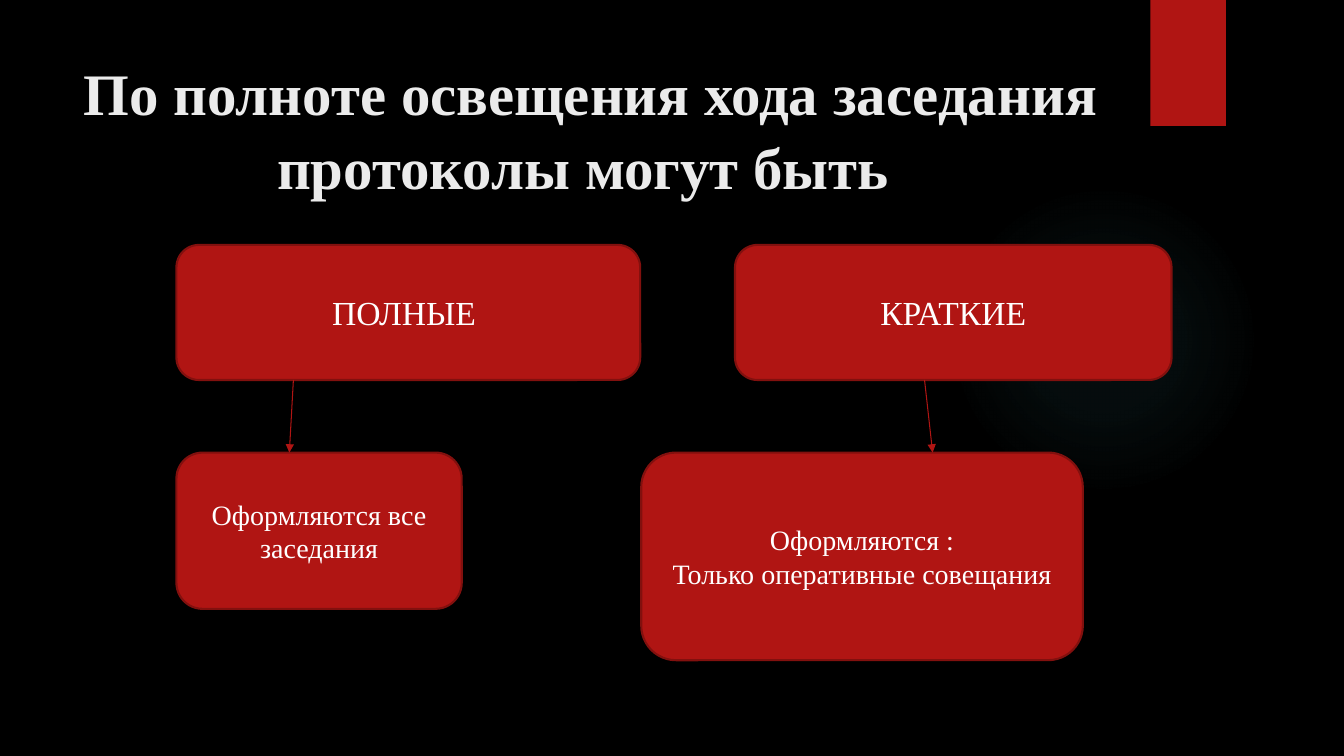
"""Build a slide on full and short meeting minutes."""
import pptx
import pptx.util
import pptx.dml.color
import pptx.enum.shapes
import pptx.enum.text
import pptx.oxml
import pptx.oxml.ns

Inches, Pt = pptx.util.Inches, pptx.util.Pt
SHAPE = pptx.enum.shapes.MSO_SHAPE
ALIGN = pptx.enum.text.PP_ALIGN
ANCHOR = pptx.enum.text.MSO_ANCHOR
NS = pptx.oxml.ns.nsdecls("a")
FONT = "Times New Roman"
RED = "B01513"


def color(text):
    return pptx.dml.color.RGBColor.from_string(text)


def block(kind, box, fill, edge=None):
    shape = slide.shapes.add_shape(kind, *map(Inches, box))
    shape.shadow.inherit = False
    shape.fill.solid()
    shape.fill.fore_color.rgb = color(fill)
    if edge:
        shape.line.color.rgb = color(edge)
        shape.line.width = Pt(1.5)
    else:
        shape.line.fill.background()
    return shape


deck = pptx.Presentation()
deck.slide_width, deck.slide_height = Inches(13.33), Inches(7.5)
slide = deck.slides.add_slide(deck.slide_layouts[5])
slide.background.fill.solid()
slide.background.fill.fore_color.rgb = color("000000")

glow = block(SHAPE.OVAL, (9.41, 1.83, 3.08, 3.08), "50B9C1")
stops = "".join(
    f'<a:gs pos="{pos * 1000}"><a:srgbClr val="50B9C1">'
    f'<a:alpha val="{alpha * 1000}"/></a:srgbClr></a:gs>'
    for pos, alpha in ((0, 7), (36, 6), (69, 0), (100, 0))
)
grad = pptx.oxml.parse_xml(
    f'<a:gradFill {NS} rotWithShape="1"><a:gsLst>{stops}</a:gsLst>'
    '<a:path path="circle"><a:fillToRect l="50000" t="50000" r="50000" b="50000"/>'
    '</a:path></a:gradFill>'
)
props = glow._element.spPr
props.replace(props.find(pptx.oxml.ns.qn("a:solidFill")), grad)

block(SHAPE.RECTANGLE, (11.41, 0, 0.75, 1.25), RED)

title = slide.shapes.title
title.left, title.top = Inches(0.71), Inches(0.5)
title.width, title.height = Inches(10.29), Inches(1.53)
frame = title.text_frame
frame.text = "По полноте освещения хода заседания протоколы могут быть "
frame.word_wrap = True
frame.auto_size = pptx.enum.text.MSO_AUTO_SIZE.NONE
frame.vertical_anchor = ANCHOR.MIDDLE
head = frame.paragraphs[0]
head.alignment = ALIGN.CENTER
head.line_spacing = 1.05
head.font.name, head.font.size, head.font.bold = FONT, Pt(42), True
head.font.color.rgb = color("EBEBEB")
slide.shapes._spTree.append(title._element)

cards = (
    ((1.75, 2.43, 4.6, 1.34), 24, "ПОЛНЫЕ "),
    ((7.29, 2.43, 4.33, 1.34), 24, "КРАТКИЕ"),
    ((1.75, 4.49, 2.83, 1.55), 20, "Оформляются все заседания"),
    ((6.36, 4.49, 4.38, 2.06), 20, "Оформляются :\nТолько оперативные совещания"),
)
for box, size, text in cards:
    frame = block(SHAPE.ROUNDED_RECTANGLE, box, RED, "82100E").text_frame
    frame.text = text
    frame.word_wrap = True
    frame.vertical_anchor = ANCHOR.MIDDLE
    for para in frame.paragraphs:
        para.alignment = ALIGN.CENTER
        para.font.name, para.font.size = FONT, Pt(size)
        para.font.color.rgb = color("FFFFFF")

for start, end in ((2.91, 2.87), (9.17, 9.25)):
    arrow = slide.shapes.add_connector(
        pptx.enum.shapes.MSO_CONNECTOR.STRAIGHT,
        Inches(start), Inches(3.77), Inches(end), Inches(4.49),
    )
    arrow.line.color.rgb = color(RED)
    arrow.line.width = Pt(0.75)
    arrow.line._get_or_add_ln().append(
        pptx.oxml.parse_xml(f'<a:tailEnd {NS} type="triangle"/>')
    )
    arrow._element.spPr.append(pptx.oxml.parse_xml(f"<a:effectLst {NS}/>"))

deck.save("out.pptx")
